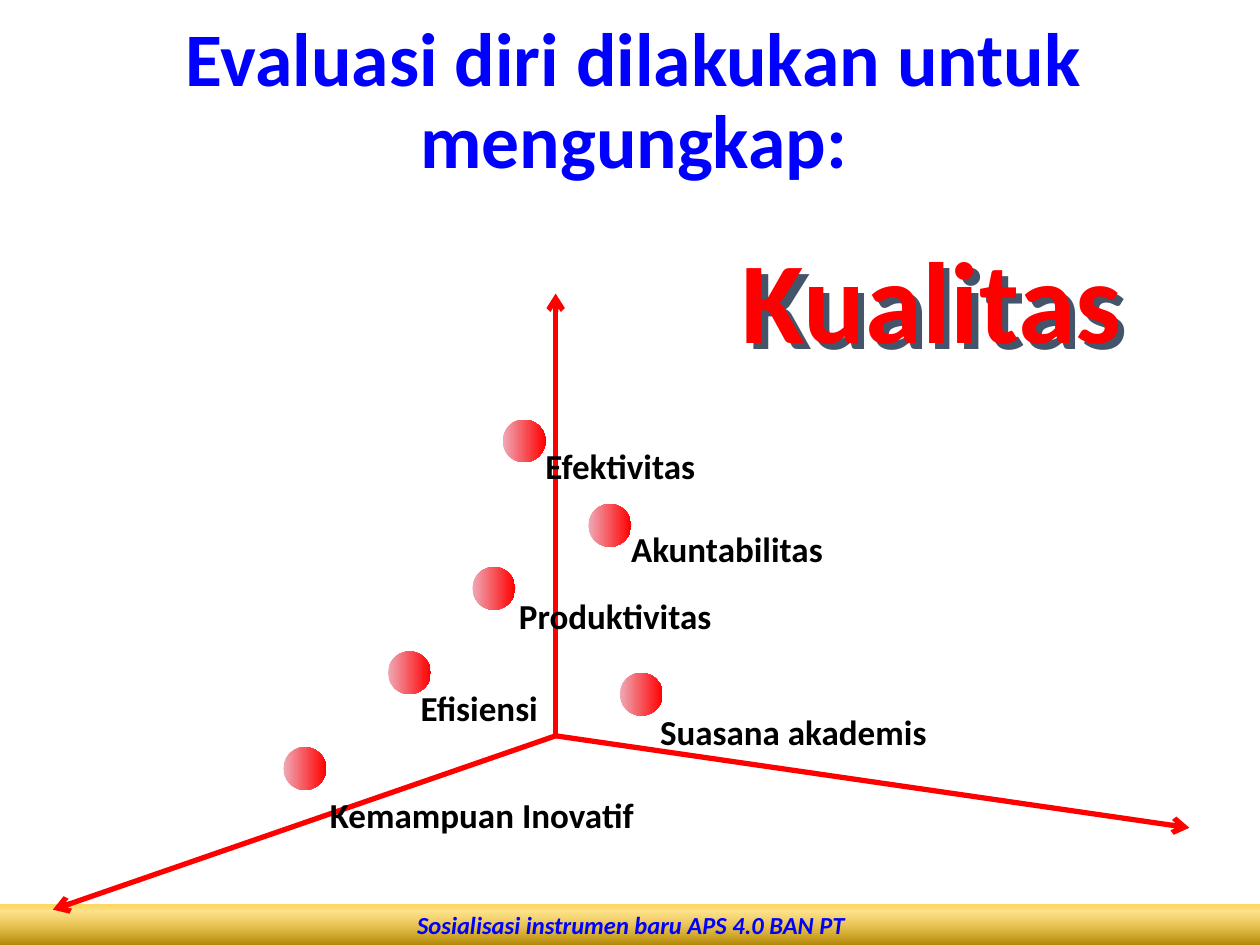
"""Build a slide of six quality aspects set among three axes."""
import dataclasses
import lxml.etree
import pptx
import pptx.dml.color
import pptx.enum.shapes
import pptx.enum.text
import pptx.oxml
import pptx.oxml.ns
import pptx.util

Inches = pptx.util.Inches
Align = pptx.enum.text.PP_ALIGN
Anchor = pptx.enum.text.MSO_ANCHOR
Shape = pptx.enum.shapes.MSO_SHAPE
qn = pptx.oxml.ns.qn


@dataclasses.dataclass(frozen=True)
class Theme:
    font: str = "Calibri"
    blue: str = "0000FF"
    red: str = "FF0000"
    black: str = "000000"
    white: str = "FFFFFF"
    slate: str = "44546A"
    ball: tuple = ((0, "EFA9B6", 100), (100, "FF0000", 100))
    gold: tuple = ((0, "AB8100", 100), (83, "FFC208", 46), (100, "FFD966", 100))
    title: float = 43.2
    hero: float = 66
    label: float = 20
    foot: float = 14
    axis: float = 3


class Maker:
    def __init__(self, theme, slide):
        self.theme = theme
        self.slide = slide

    def color(self, code):
        return pptx.dml.color.RGBColor.from_string(code)

    def letter(self, shape, text, size, code, align=Align.LEFT,
               anchor=Anchor.TOP, space=1.0, slant=False):
        frame = shape.text_frame
        frame.word_wrap = True
        frame.vertical_anchor = anchor
        para = frame.paragraphs[0]
        para.text = text
        para.alignment = align
        para.line_spacing = space
        font = para.font
        font.name = self.theme.font
        font.size = pptx.util.Pt(size)
        font.bold = True
        font.italic = slant
        font.color.rgb = self.color(code)

    def text(self, box, text, size, code, **style):
        shape = self.slide.shapes.add_textbox(*map(Inches, box))
        self.letter(shape, text, size, code, **style)
        return shape

    def blend(self, kind, box, stops, angle):
        shape = self.slide.shapes.add_shape(kind, *map(Inches, box))
        shape.shadow.inherit = False
        shape.line.fill.background()
        shape.fill.gradient()
        shape.fill.gradient_angle = angle
        group = shape.element.spPr.find(qn("a:gradFill")).find(qn("a:gsLst"))
        for old in list(group):
            group.remove(old)
        for place, code, alpha in stops:
            stop = lxml.etree.SubElement(group, qn("a:gs"), pos=str(place * 1000))
            tint = lxml.etree.SubElement(stop, qn("a:srgbClr"), val=code)
            if alpha < 100:
                lxml.etree.SubElement(tint, qn("a:alpha"), val=str(alpha * 1000))
        return shape

    def arrow(self, start, end):
        line = self.slide.shapes.add_connector(
            pptx.enum.shapes.MSO_CONNECTOR.STRAIGHT, *map(Inches, start + end))
        line.line.color.rgb = self.color(self.theme.red)
        line.line.width = pptx.util.Pt(self.theme.axis)
        form = line.element.spPr
        lxml.etree.SubElement(form.find(qn("a:ln")), qn("a:tailEnd"), type="arrow")
        lxml.etree.SubElement(form, qn("a:effectLst"))

    def shade(self, shape, code):
        group = lxml.etree.SubElement(shape.element.spPr, qn("a:effectLst"))
        cast = lxml.etree.SubElement(group, qn("a:outerShdw"), dist="63500",
                                     dir="2700000", algn="ctr", rotWithShape="0")
        lxml.etree.SubElement(cast, qn("a:srgbClr"), val=code)

    def aspect(self, name, dot, box, anchor=Anchor.TOP, space=1.0):
        self.text(box, name, self.theme.label, self.theme.black,
                  anchor=anchor, space=space)
        self.blend(Shape.OVAL, dot + (0.34, 0.34), self.theme.ball, 0)

    def footer(self, box, text):
        bar = self.blend(Shape.RECTANGLE, box, self.theme.gold, 90)
        bar.line.color.rgb = self.color(self.theme.white)
        bar.line.width = pptx.util.Pt(0.75)
        self.letter(bar, text, self.theme.foot, self.theme.blue,
                    align=Align.CENTER, anchor=Anchor.MIDDLE, slant=True)


def main():
    deck = pptx.Presentation()
    deck.slide_width, deck.slide_height = Inches(10), Inches(7.5)
    theme = Theme()
    make = Maker(theme, deck.slides.add_slide(deck.slide_layouts[6]))

    make.footer((-0.01, 7.17, 10.04, 0.34), "Sosialisasi instrumen baru APS 4.0 BAN PT")
    hero = make.text((5.26, 2.06, 4.27, 0.98), "Kualitas", theme.hero, theme.red,
                     align=Align.CENTER, space=0.7)
    make.shade(hero, theme.slate)

    for tip in ((0.42, 7.22), (4.41, 2.33), (9.44, 6.57)):
        make.arrow((4.41, 5.84), tip)

    aspects = (
        ("Efisiensi", (3.08, 5.17), (3.24, 5.4, 1.98, 0.42)),
        ("Suasana akademis", (4.92, 5.34), (5.14, 5.56, 3.82, 0.6), Anchor.MIDDLE, 0.6),
        ("Efektivitas", (3.99, 3.33), (4.23, 3.48, 2.02, 0.42)),
        ("Akuntabilitas", (4.67, 4), (4.91, 4.14, 2.31, 0.5)),
        ("Produktivitas", (3.75, 4.5), (4.02, 4.67, 2.4, 0.42)),
        ("Kemampuan Inovatif", (2.25, 5.93), (2.52, 6.17, 2.7, 0.67), Anchor.MIDDLE, 0.7),
    )
    for item in aspects:
        make.aspect(*item)

    make.text((0.18, 0.14, 9.7, 1.35), "Evaluasi diri dilakukan untuk mengungkap:",
              theme.title, theme.blue, align=Align.CENTER,
              anchor=Anchor.MIDDLE, space=0.9)
    deck.save("out.pptx")


if __name__ == "__main__":
    main()
